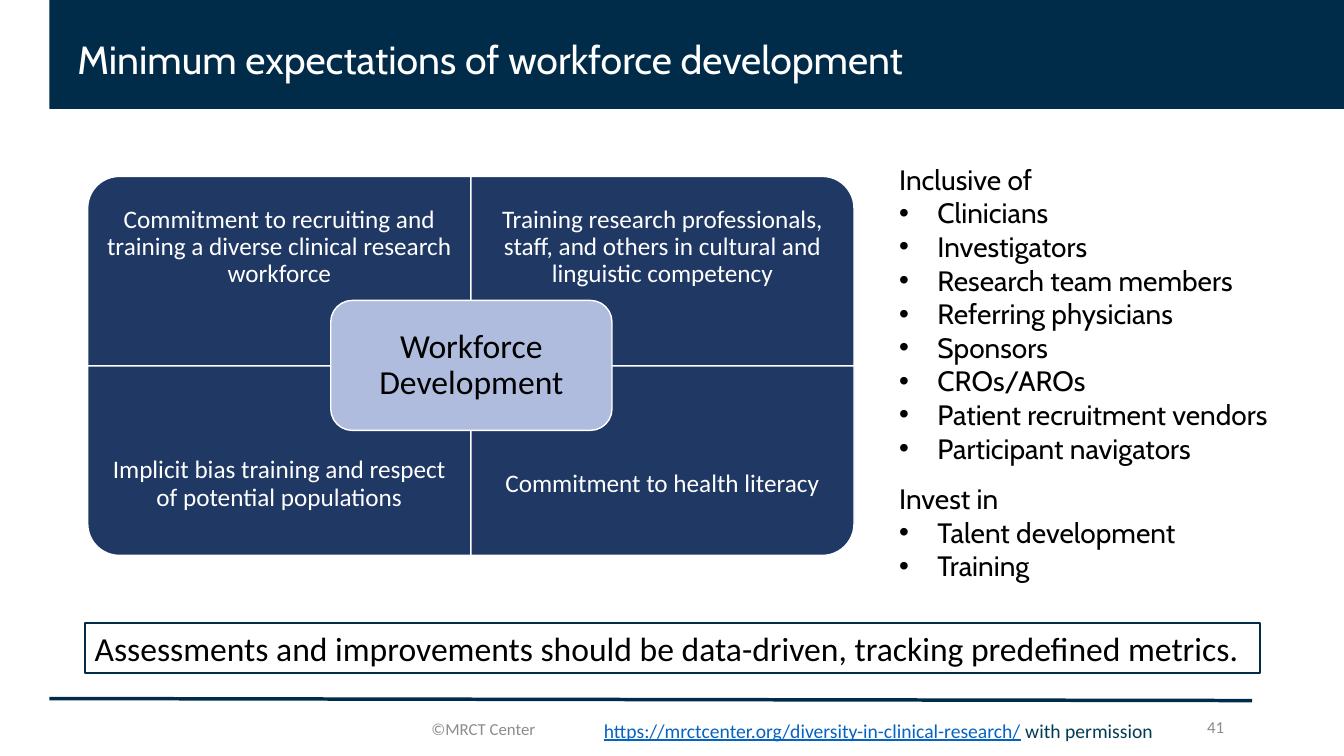
import dataclasses
import typing

import lxml.etree
import pptx
import pptx.dml.color
import pptx.enum.shapes
import pptx.enum.text
import pptx.oxml.ns
import pptx.util

Inches = pptx.util.Inches
Pt = pptx.util.Pt
Kind = pptx.enum.shapes.MSO_SHAPE
Align = pptx.enum.text.PP_ALIGN
Anchor = pptx.enum.text.MSO_ANCHOR
qn = pptx.oxml.ns.qn

NAVY = "012C49"
WHITE = "FFFFFF"
BLACK = "000000"
GREY = "8C8C8C"


@dataclasses.dataclass
class Run:
    text: str
    size: float
    color: str
    face: str = "Calibri"
    under: bool = False


@dataclasses.dataclass
class Line:
    runs: list[Run]
    form: dict[str, typing.Any] = dataclasses.field(default_factory=dict)
    bullet: bool = False


@dataclasses.dataclass
class Label:
    box: tuple[float, float, float, float]
    lines: list[Line]
    anchor: typing.Any = Anchor.MIDDLE
    inset: tuple[float, float] = (0.1, 0.05)
    wrap: bool = True


@dataclasses.dataclass
class Panel:
    col: int
    row: int
    angle: int
    text: str


def tint(code: str) -> pptx.dml.color.RGBColor:
    return pptx.dml.color.RGBColor.from_string(code)


def apply(target: typing.Any, form: dict[str, typing.Any]) -> None:
    for name, value in form.items():
        setattr(target, name, value)


def add_bullet(para: typing.Any) -> None:
    props = para._p.get_or_add_pPr()
    props.set("marL", str(Inches(0.38)))
    props.set("indent", str(-Inches(0.38)))
    font = lxml.etree.SubElement(props, qn("a:buFont"))
    font.set("typeface", "Arial")
    lxml.etree.SubElement(props, qn("a:buChar")).set("char", "•")


def write(shape: typing.Any, label: Label) -> None:
    frame = shape.text_frame
    side, edge = map(Inches, label.inset)
    apply(frame, {
        "word_wrap": label.wrap, "vertical_anchor": label.anchor,
        "margin_left": side, "margin_right": side,
        "margin_top": edge, "margin_bottom": edge,
    })
    for index, line in enumerate(label.lines):
        para = frame.add_paragraph() if index else frame.paragraphs[0]
        if line.bullet:
            add_bullet(para)
        apply(para, {"alignment": Align.LEFT} | line.form)
        for item in line.runs:
            run = para.add_run()
            run.text = item.text
            apply(run.font, {
                "name": item.face, "size": Pt(item.size),
                "underline": item.under,
            })
            run.font.color.rgb = tint(item.color)


def add_label(slide: typing.Any, label: Label) -> None:
    write(slide.shapes.add_textbox(*map(Inches, label.box)), label)


def add_block(slide: typing.Any, kind: typing.Any,
              box: tuple[float, float, float, float], fill: str | None,
              edge: str | None = None, width: float = 1) -> typing.Any:
    shape = slide.shapes.add_shape(kind, *map(Inches, box))
    shape.shadow.inherit = False
    if fill:
        shape.fill.solid()
        shape.fill.fore_color.rgb = tint(fill)
    else:
        shape.fill.background()
    if edge:
        shape.line.color.rgb = tint(edge)
        shape.line.width = Pt(width)
    else:
        shape.line.fill.background()
    return shape


def add_rule(slide: typing.Any) -> None:
    rule = slide.shapes.add_connector(
        pptx.enum.shapes.MSO_CONNECTOR.STRAIGHT,
        *map(Inches, (0.49, 6.93, 12.42, 6.95)))
    rule.line.color.rgb = tint(NAVY)
    rule.line.width = Pt(2.5)
    lxml.etree.SubElement(rule._element.spPr, qn("a:effectLst"))


def center(text: str, size: float, color: str) -> list[Line]:
    form = {"alignment": Align.CENTER, "line_spacing": 0.9}
    return [Line([Run(text, size, color)], form)]


def add_panel(slide: typing.Any, panel: Panel) -> None:
    wide, high = 3.8, 1.88
    left, top = 0.87 + panel.col * wide, 1.75 + panel.row * high
    box = (left, top, wide, high)
    if panel.angle % 180:
        shift = (wide - high) / 2
        box = (left + shift, top - shift, high, wide)
    shape = add_block(slide, Kind.ROUND_1_RECTANGLE, box, "203864", WHITE)
    shape.rotation = panel.angle
    lines = center(panel.text, 18, WHITE)
    spot = (left, top + panel.row * 0.47, wide, 1.41)
    add_label(slide, Label(spot, lines, inset=(0.14, 0.14)))


PANELS = [
    Panel(0, 0, 270, "Commitment to recruiting and training a diverse "
                     "clinical research workforce"),
    Panel(1, 0, 0, "Training research professionals, staff, and others in "
                   "cultural and linguistic competency"),
    Panel(0, 1, 180, "Implicit bias training and respect of potential "
                     "populations"),
    Panel(1, 1, 90, "Commitment to health literacy"),
]

GROUPS = {
    "Inclusive of": [
        "Clinicians", "Investigators", "Research team members",
        "Referring physicians", "Sponsors", "CROs/AROs",
        "Patient recruitment vendors", "Participant navigators",
    ],
    "Invest in": ["Talent development", "Training"],
}


def list_lines() -> list[Line]:
    lines: list[Line] = []
    for head, items in GROUPS.items():
        form = {"space_before": Pt(12)} if lines else {}
        lines.append(Line([Run(head, 20, BLACK, "Cabin")], form))
        lines += [Line([Run(item, 20, BLACK, "Cabin")], bullet=True)
                  for item in items]
    return lines


LABELS = [
    Label((0.67, -0.11, 11.52, 1.45), [Line(
        [Run("Minimum expectations of workforce development", 28, WHITE,
             "Cabin")], {"line_spacing": 0.9})]),
    Label((8.82, 1.56, 4.27, 4.31), list_lines(), Anchor.TOP),
    Label((5.89, 7.08, 5.82, 0.34), [Line([
        Run("https://mrctcenter.org/diversity-in-clinical-research/", 14,
            "0563C1", under=True),
        Run(" with permission", 14, "003D54")])], Anchor.TOP),
    Label((10.37, 7.01, 1.87, 0.4), [Line(
        [Run("41", 12, GREY)], {"alignment": Align.RIGHT})]),
    Label((4.18, 7.03, 1.4, 0.4), [Line([Run("©MRCT Center", 12, GREY)])]),
]


def main() -> None:
    deck = pptx.Presentation()
    apply(deck, {"slide_width": Inches(13.33), "slide_height": Inches(7.5)})
    slide = deck.slides.add_slide(deck.slide_layouts[6])
    add_block(slide, Kind.RECTANGLE, (0.49, 0, 12.84, 1.08), NAVY)
    add_rule(slide)
    for panel in PANELS:
        add_panel(slide, panel)
    hub = (3.28, 2.98, 2.79, 1.29)
    shape = add_block(slide, Kind.ROUNDED_RECTANGLE, hub, "B0BCDE", WHITE)
    write(shape, Label(hub, center("Workforce Development", 24, BLACK),
                       inset=(0.16, 0.16)))
    note = (0.84, 6.18, 11.66, 0.5)
    shape = add_block(slide, Kind.RECTANGLE, note, None, "002C49", 1.5)
    write(shape, Label(note, [Line([Run(
        "Assessments and improvements should be data-driven, tracking "
        "predefined metrics.", 24, BLACK)])], Anchor.TOP, wrap=False))
    for label in LABELS:
        add_label(slide, label)
    deck.save("out.pptx")


if __name__ == "__main__":
    main()
